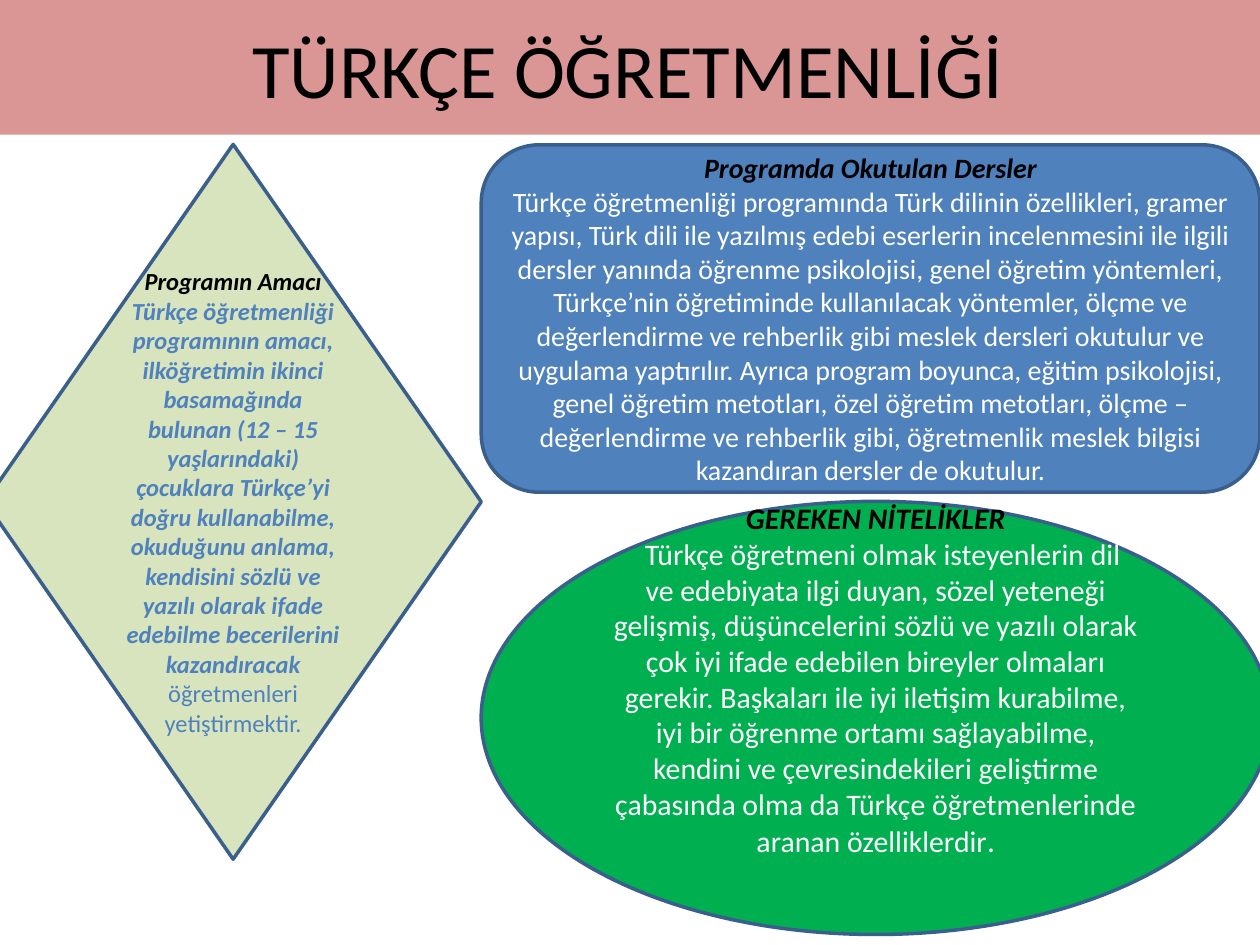
from dataclasses import dataclass

from pptx import Presentation
from pptx.dml.color import RGBColor
from pptx.enum.shapes import MSO_SHAPE
from pptx.enum.text import MSO_ANCHOR, PP_ALIGN
from pptx.util import Pt

DIAMOND, ROUNDED, OVAL = MSO_SHAPE.DIAMOND, MSO_SHAPE.ROUNDED_RECTANGLE, MSO_SHAPE.OVAL
CENTER = PP_ALIGN.CENTER
MIDDLE = MSO_ANCHOR.MIDDLE
TITLE_ONLY = 5


@dataclass(frozen=True)
class Theme:
    font: str = "Calibri"
    ink: str = "000000"
    white: str = "FFFFFF"
    blue: str = "4F81BD"
    outline: str = "3A5F8C"
    rose: str = "D99694"
    sage: str = "D7E4BD"
    green: str = "00B050"
    title_size: float = 44
    purpose_size: float = 14
    courses_size: float = 16
    qualities_size: float = 17
    full_stop_size: float = 18


class PageBuilder:
    def __init__(self, page, theme):
        self.page = page
        self.theme = theme

    def style(self, para, size, color, strong=False):
        para.alignment = CENTER
        font = para.font
        font.name, font.size = self.theme.font, Pt(size)
        font.bold = font.italic = strong
        font.color.rgb = RGBColor.from_string(color)

    def fill(self, shape, color):
        shape.fill.solid()
        shape.fill.fore_color.rgb = RGBColor.from_string(color)

    def title(self, text, left, top, width, height):
        box = self.page.shapes.title
        box.left, box.top, box.width, box.height = map(Pt, (left, top, width, height))
        self.fill(box, self.theme.rose)
        box.text_frame.text = text
        box.text_frame.vertical_anchor = MIDDLE
        self.style(box.text_frame.paragraphs[0], self.theme.title_size, self.theme.ink)

    def panel(self, kind, bounds, color, heading, size):
        """Draw an outlined shape with a bold italic heading and return it."""
        box = self.page.shapes.add_shape(kind, *map(Pt, bounds))
        box.shadow.inherit = False
        self.fill(box, color)
        box.line.color.rgb = RGBColor.from_string(self.theme.outline)
        box.line.width = Pt(2)
        frame = box.text_frame
        frame.word_wrap = True
        frame.vertical_anchor = MIDDLE
        frame.text = heading
        self.style(frame.paragraphs[0], size, self.theme.ink, strong=True)
        return box

    def paragraph(self, box, text, size, color, strong=False, indent=0):
        para = box.text_frame.add_paragraph()
        para.add_run().text = text
        self.style(para, size, color, strong)
        if indent:
            para._p.get_or_add_pPr().set("marL", str(Pt(indent)))
        return para


def main():
    deck = Presentation()
    deck.slide_width, deck.slide_height = Pt(720), Pt(540)
    theme = Theme()
    page = deck.slides.add_slide(deck.slide_layouts[TITLE_ONLY])
    builder = PageBuilder(page, theme)
    builder.title("TÜRKÇE ÖĞRETMENLİĞİ", -2, 0, 722, 77)

    purpose = builder.panel(DIAMOND, (-8.5, 82.5, 283.5, 408.5), theme.sage,
                            "Programın Amacı", theme.purpose_size)
    para = builder.paragraph(
        purpose,
        "Türkçe öğretmenliği programının amacı, ilköğretimin ikinci basamağında "
        "bulunan (12 – 15 yaşlarındaki) çocuklara Türkçe’yi doğru kullanabilme, "
        "okuduğunu anlama, kendisini sözlü ve yazılı olarak ifade edebilme "
        "becerilerini kazandıracak ",
        theme.purpose_size, theme.blue, strong=True)
    span = para.add_run()
    span.text = "öğretmenleri yetiştirmektir."
    span.font.bold = span.font.italic = False

    courses = builder.panel(ROUNDED, (275, 82.75, 445, 198.5), theme.blue,
                            "Programda Okutulan Dersler", theme.courses_size)
    builder.paragraph(
        courses,
        "Türkçe öğretmenliği programında Türk dilinin özellikleri, gramer yapısı, "
        "Türk dili ile yazılmış edebi eserlerin incelenmesini ile ilgili dersler "
        "yanında öğrenme psikolojisi, genel öğretim yöntemleri, Türkçe’nin "
        "öğretiminde kullanılacak yöntemler, ölçme ve değerlendirme ve rehberlik "
        "gibi meslek dersleri okutulur ve uygulama yaptırılır. Ayrıca program "
        "boyunca, eğitim psikolojisi, genel öğretim metotları, özel öğretim "
        "metotları, ölçme – değerlendirme ve rehberlik gibi, öğretmenlik meslek "
        "bilgisi kazandıran dersler de okutulur.",
        theme.courses_size, theme.white)

    qualities = builder.panel(OVAL, (275, 286.5, 451, 247.5), theme.green,
                              "GEREKEN NİTELİKLER", theme.qualities_size)
    qualities.text_frame.margin_bottom = Pt(47.5)
    builder.paragraph(qualities, "Türkçe öğretmeni olmak isteyenlerin dil",
                      theme.qualities_size, theme.white, indent=8)
    para = builder.paragraph(
        qualities,
        "ve edebiyata ilgi duyan, sözel yeteneği gelişmiş, düşüncelerini sözlü ve "
        "yazılı olarak çok iyi ifade edebilen bireyler olmaları gerekir. Başkaları "
        "ile iyi iletişim kurabilme, iyi bir öğrenme ortamı sağlayabilme, kendini ve "
        "çevresindekileri geliştirme çabasında olma da Türkçe öğretmenlerinde aranan "
        "özelliklerdir",
        theme.qualities_size, theme.white)
    span = para.add_run()
    span.text = "."
    span.font.size = Pt(theme.full_stop_size)

    deck.save("out.pptx")


if __name__ == "__main__":
    main()
